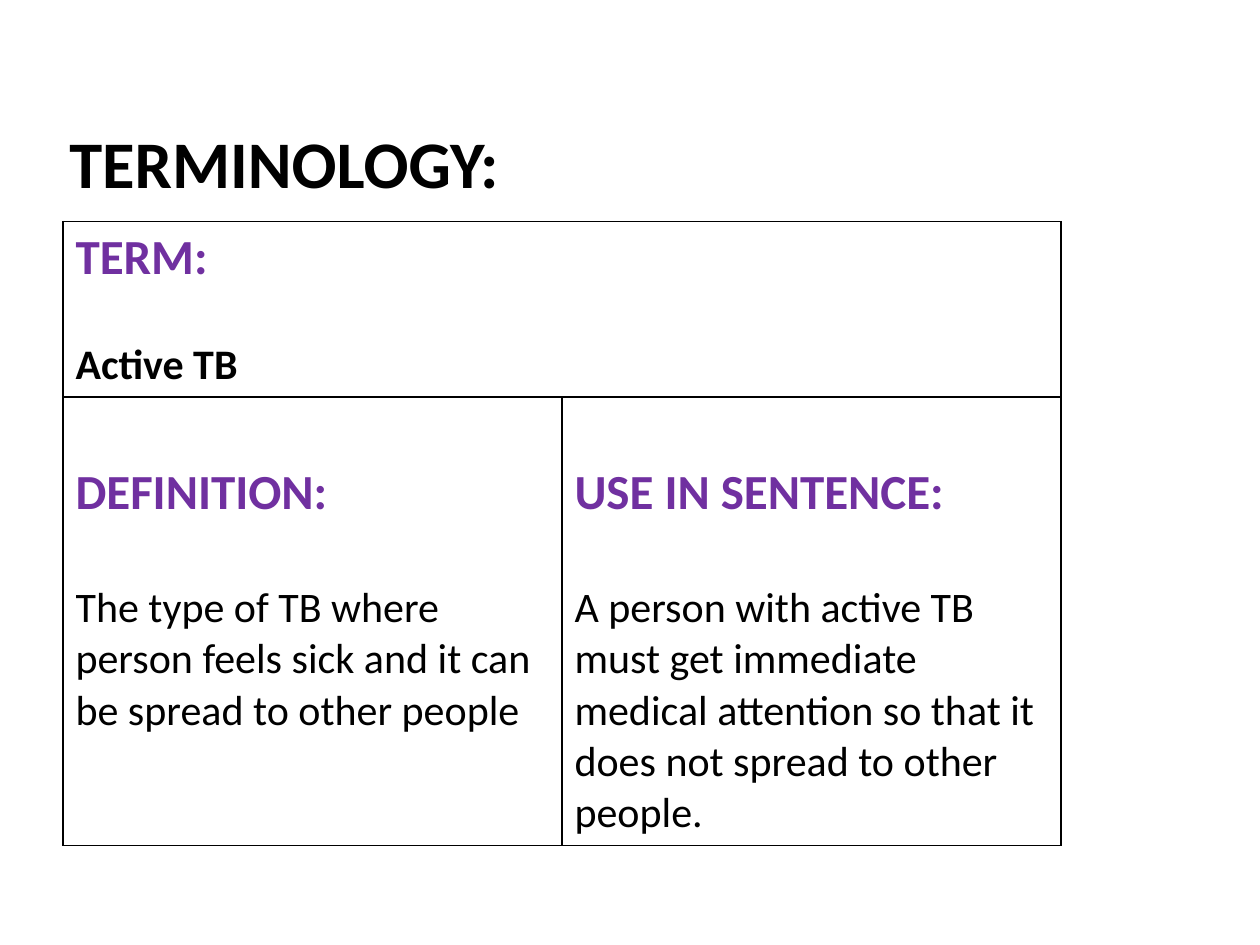
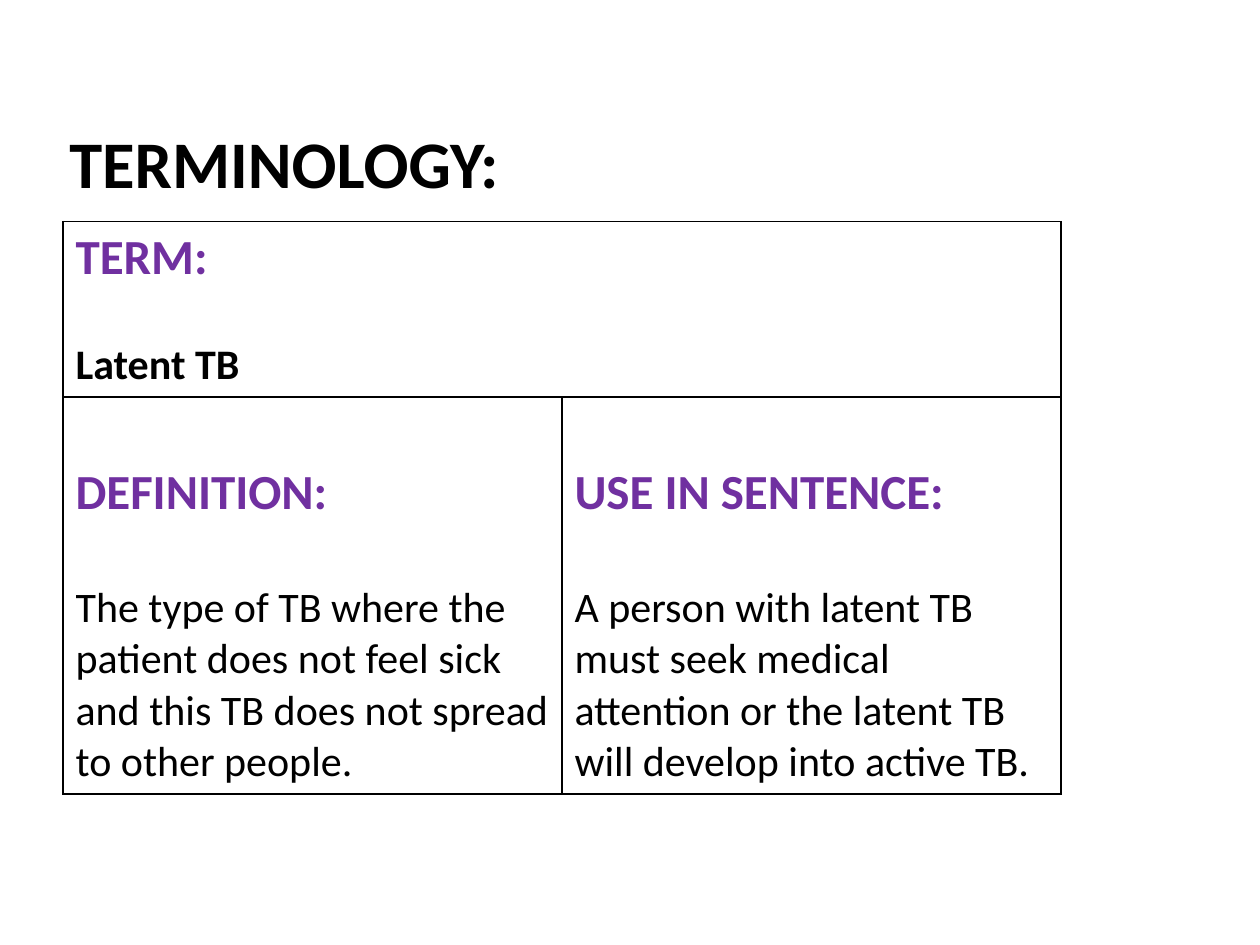
from dataclasses import dataclass

from lxml.etree import SubElement
from pptx import Presentation
from pptx.dml.color import RGBColor
from pptx.enum.text import MSO_ANCHOR, PP_ALIGN
from pptx.oxml.ns import qn
from pptx.slide import Slide
from pptx.table import _Cell as Cell
from pptx.text.text import _Paragraph as Paragraph
from pptx.util import Inches, Pt


@dataclass(frozen=True)
class Theme:
    font: str = "Calibri"
    ink: RGBColor = RGBColor(0x00, 0x00, 0x00)
    accent: RGBColor = RGBColor(0x70, 0x30, 0xA0)
    title_size: float = 38
    heading_size: float = 28
    text_size: float = 24
    border_width: float = 1
    line_height: float = 1.22

    def line_gap(self, size: float) -> Pt:
        return Pt(round(size * self.line_height, 1))


@dataclass(frozen=True)
class TermCard:
    term: str
    definition: str
    sentence: str
    detail_height: float


THEME = Theme()
LEFT, WIDTH = Inches(0.5), Inches(7.92)
TERM_HEIGHT = Inches(1.39)
CELL_MARGIN = Inches(0.05)

CARDS = [
    TermCard(
        "Active TB",
        "The type of TB where person feels sick and it can be spread to other people",
        "A person with active TB must get immediate medical attention so that it "
        "does not spread to other people.",
        3.56,
    ),
    TermCard(
        "Latent TB",
        "The type of TB where the patient does not feel sick and this TB does not "
        "spread to other people.",
        "A person with latent TB must seek medical attention or the latent TB will "
        "develop into active TB.",
        3.15,
    ),
]


def style(paragraph: Paragraph, size: float, color: RGBColor, bold: bool) -> None:
    font = paragraph.font
    font.name, font.size, font.bold = THEME.font, Pt(size), bold
    font.color.rgb = color


def add_title(slide: Slide) -> None:
    title = slide.shapes.title
    title.left, title.top = LEFT, Inches(0.35)
    title.width, title.height = WIDTH, Inches(1.25)
    frame = title.text_frame
    frame.text = "TERMINOLOGY:"
    frame.vertical_anchor = MSO_ANCHOR.BOTTOM
    frame.margin_left = frame.margin_right = Inches(0.05)
    frame.margin_top = frame.margin_bottom = 0
    paragraph = frame.paragraphs[0]
    paragraph.alignment = PP_ALIGN.LEFT
    style(paragraph, THEME.title_size, THEME.ink, True)


def format_cell(cell: Cell) -> None:
    properties = cell._tc.get_or_add_tcPr()
    for side in ("a:lnL", "a:lnR", "a:lnT", "a:lnB"):
        line = SubElement(properties, qn(side), w=str(Pt(THEME.border_width)))
        fill = SubElement(line, qn("a:solidFill"))
        SubElement(fill, qn("a:srgbClr"), val=str(THEME.ink))
    cell.fill.background()


def fill_cell(cell: Cell, heading: str, text: str, gap_size: float, bold: bool) -> None:
    frame = cell.text_frame
    frame.text = heading
    style(frame.paragraphs[0], THEME.heading_size, THEME.accent, True)
    paragraph = frame.add_paragraph()
    paragraph.text = text
    paragraph.space_before = THEME.line_gap(gap_size)
    style(paragraph, THEME.text_size, THEME.ink, bold)


def add_card(slide: Slide, card: TermCard) -> None:
    detail_height = Inches(card.detail_height)
    table = slide.shapes.add_table(
        2, 2, LEFT, Inches(1.76), WIDTH, TERM_HEIGHT + detail_height
    ).table
    table.first_row = table.horz_banding = False
    table.rows[0].height, table.rows[1].height = TERM_HEIGHT, detail_height
    for cell in table.iter_cells():
        format_cell(cell)

    term_cell = table.cell(0, 0)
    term_cell.merge(table.cell(0, 1))
    fill_cell(term_cell, "TERM:", card.term, THEME.text_size, True)

    details = [("DEFINITION:", card.definition), ("USE IN SENTENCE:", card.sentence)]
    for column, (heading, text) in enumerate(details):
        cell = table.cell(1, column)
        cell.margin_top = CELL_MARGIN + THEME.line_gap(THEME.heading_size)
        fill_cell(cell, heading, text, THEME.heading_size, False)


def main() -> None:
    presentation = Presentation()
    presentation.slide_width, presentation.slide_height = Inches(10), Inches(7.5)
    title_only = presentation.slide_layouts[5]
    for card in CARDS:
        slide = presentation.slides.add_slide(title_only)
        add_title(slide)
        add_card(slide, card)
    presentation.save("out.pptx")


if __name__ == "__main__":
    main()
